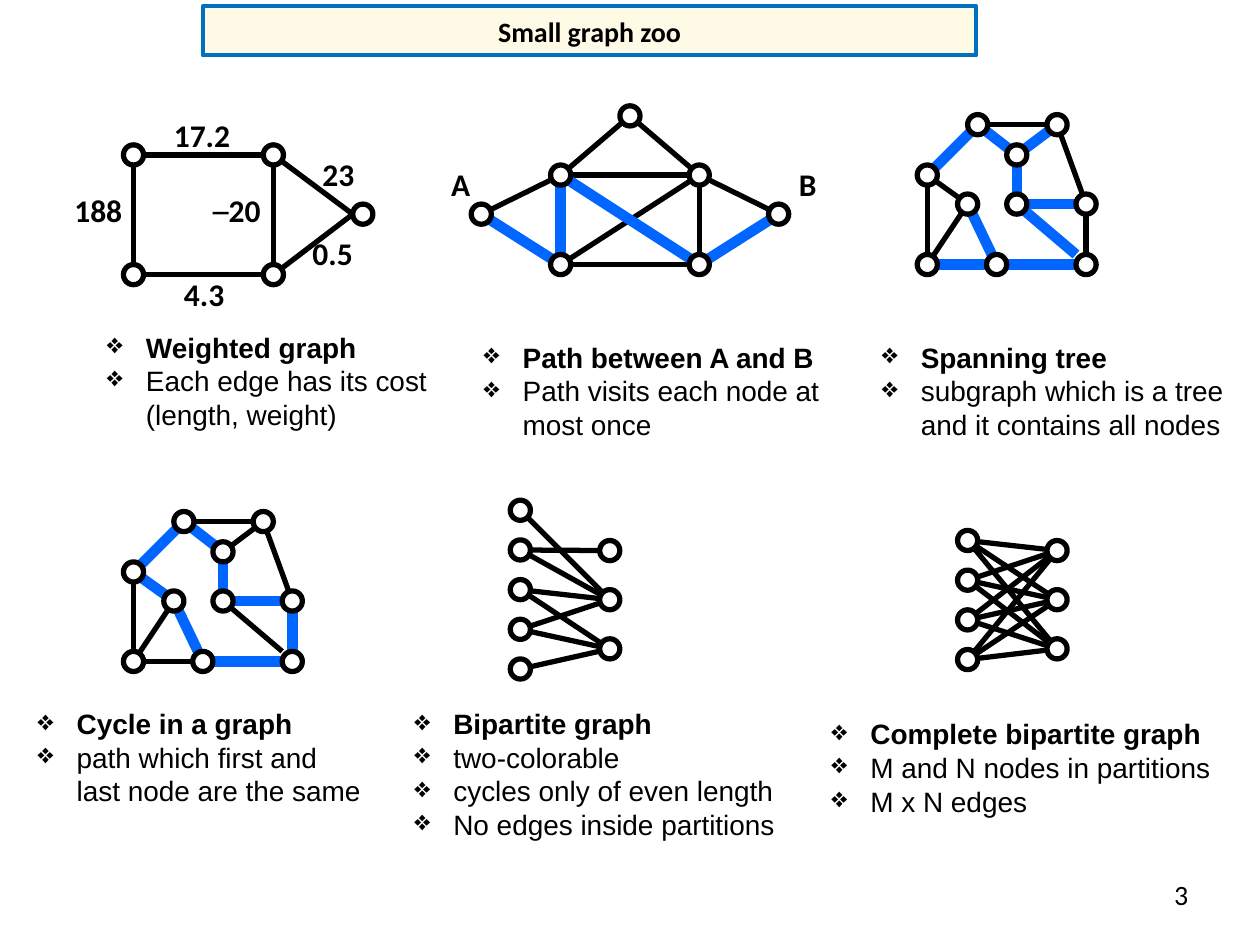
from itertools import product

from lxml import etree
from pptx import Presentation
from pptx.dml.color import RGBColor
from pptx.enum.shapes import MSO_CONNECTOR, MSO_SHAPE
from pptx.enum.text import MSO_ANCHOR, MSO_AUTO_SIZE, PP_ALIGN
from pptx.oxml.ns import qn
from pptx.util import Inches, Pt

BLACK = RGBColor(0x00, 0x00, 0x00)
WHITE = RGBColor(0xFF, 0xFF, 0xFF)
BLUE = RGBColor(0x00, 0x66, 0xFF)
CREAM = RGBColor(0xFF, 0xFA, 0xE5)
FRAME = RGBColor(0x00, 0x70, 0xC0)
STRAIGHT = MSO_CONNECTOR.STRAIGHT
OVAL, RECTANGLE = MSO_SHAPE.OVAL, MSO_SHAPE.RECTANGLE
MIDDLE = MSO_ANCHOR.MIDDLE
GROW = MSO_AUTO_SIZE.SHAPE_TO_FIT_TEXT
CENTER, RIGHT = PP_ALIGN.CENTER, PP_ALIGN.RIGHT

WEIGHTED = {"A": (1.06, 1.23), "B": (2.17, 1.23), "C": (2.17, 2.18),
            "D": (1.06, 2.18), "E": (2.88, 1.7)}
WEIGHTED_TIP = {"e": (2.8, 1.7)}
PATH = {"A": (3.82, 1.7), "B": (6.18, 1.7), "C": (5, 0.92), "D": (4.45, 1.39),
        "E": (5.55, 1.39), "F": (4.45, 2.1), "G": (5.55, 2.1)}
TREE = {"A": (7.76, 0.99), "B": (8.39, 0.99), "C": (8.07, 1.23),
        "D": (7.36, 1.39), "E": (7.68, 1.62), "F": (8.07, 1.62),
        "G": (8.62, 1.62), "H": (7.36, 2.1), "I": (7.91, 2.1),
        "J": (8.62, 2.1)}
TREE_TIP = {"j": (8.54, 2.02)}
CYCLE_SHIFT = (-6.3, 3.15)

WEIGHTS = [("17.2", 1.38, 0.92, 0.45), ("23", 2.56, 1.23, 0.26),
           ("188", 0.59, 1.52, 0.39), ("─20", 1.69, 1.52, 0.39),
           ("0.5", 2.48, 1.86, 0.39), ("4.3", 1.46, 2.18, 0.39)]
PATH_ENDS = [("A", 3.58, 1.31, 0.15), ("B", 6.34, 1.31, 0.14)]

CAPTIONS = [
    (0.75, 2.57, 2.99, 0.91,
     ["Weighted graph", "Each edge has its cost (length, weight)"]),
    (3.74, 2.65, 3.15, 0.91,
     ["Path between A and B", "Path visits each node at most once"]),
    (6.9, 2.65, 2.98, 0.91,
     ["Spanning tree", "subgraph which is a tree and it contains all nodes"]),
    (0.2, 5.56, 2.82, 0.91,
     ["Cycle in a graph", "path which first and last node are the same"]),
    (3.19, 5.56, 3.07, 1.18,
     ["Bipartite graph", "two-colorable", "cycles only of even length",
      "No edges inside partitions"]),
    (6.5, 5.64, 3.31, 0.91,
     ["Complete bipartite graph", "M and N nodes in partitions",
      "M x N edges"]),
]


def shift(points, offset):
    return {name: (x + offset[0], y + offset[1])
            for name, (x, y) in points.items()}


def column(names, x, top, gap):
    return {name: (x, top + gap * row) for row, name in enumerate(names)}


class GraphSlide:
    heading_font = "Calibri"
    body_font = "Arial"
    body_size = 16
    label_size = 18
    node_size = 0.16
    edge_width = 3
    marked_width = 6

    def __init__(self, slide):
        self.shapes = slide.shapes

    def style(self, font, name, size, bold=False):
        font.name = name
        font.size = Pt(size)
        font.bold = bold
        font.color.rgb = BLACK

    def shape(self, kind, left, top, width, height, fill, line, line_width):
        shape = self.shapes.add_shape(kind, Inches(left), Inches(top),
                                      Inches(width), Inches(height))
        shape.shadow.inherit = False
        shape.fill.solid()
        shape.fill.fore_color.rgb = fill
        shape.line.color.rgb = line
        shape.line.width = Pt(line_width)
        return shape

    def box(self, left, top, width, height):
        return self.shapes.add_textbox(Inches(left), Inches(top),
                                       Inches(width), Inches(height))

    def edge(self, start, end, color, width):
        line = self.shapes.add_connector(STRAIGHT, *map(Inches, start + end))
        line.line.color.rgb = color
        line.line.width = Pt(width)
        properties = line._element.find(qn("p:spPr"))
        etree.SubElement(properties, qn("a:effectLst"))

    def node(self, x, y):
        size = self.node_size
        self.shape(OVAL, x - size / 2, y - size / 2, size, size,
                   WHITE, BLACK, self.edge_width)

    def graph(self, nodes, edges, marked=(), tips=None):
        points = {**nodes, **(tips or {})}
        for start, end in edges:
            self.edge(points[start], points[end], BLACK, self.edge_width)
        for start, end in marked:
            self.edge(points[start], points[end], BLUE, self.marked_width)
        for x, y in nodes.values():
            self.node(x, y)

    def label(self, text, left, top, width):
        frame = self.box(left, top, width, 0.3).text_frame
        frame.margin_left = frame.margin_right = 0
        frame.margin_top = frame.margin_bottom = 0
        frame.word_wrap = False
        frame.auto_size = GROW
        frame.text = text
        self.style(frame.paragraphs[0].runs[0].font, self.heading_font,
                   self.label_size, True)

    def caption(self, left, top, width, height, lines):
        frame = self.box(left, top, width, height).text_frame
        frame.word_wrap = True
        frame.auto_size = GROW
        frame.text = "\n".join(lines)
        for index, para in enumerate(frame.paragraphs):
            properties = para._p.get_or_add_pPr()
            properties.set("marL", str(Inches(0.31)))
            properties.set("indent", str(-Inches(0.31)))
            etree.SubElement(properties, qn("a:buChar"), char="❖")
            self.style(para.runs[0].font, self.body_font, self.body_size,
                       index == 0)

    def title(self, text):
        box = self.shape(RECTANGLE, 1.61, 0.05, 6.14, 0.39, CREAM, FRAME, 2.25)
        self.line_of_text(box.text_frame, text, CENTER, True)

    def page_number(self, text):
        frame = self.box(7.2, 6.9, 2.33, 0.4).text_frame
        self.line_of_text(frame, text, RIGHT, False)

    def line_of_text(self, frame, text, alignment, bold):
        frame.word_wrap = True
        frame.vertical_anchor = MIDDLE
        frame.text = text
        para = frame.paragraphs[0]
        para.alignment = alignment
        self.style(para.runs[0].font, self.heading_font, self.body_size, bold)


def main():
    deck = Presentation()
    deck.slide_width, deck.slide_height = Inches(10), Inches(7.5)
    page = GraphSlide(deck.slides.add_slide(deck.slide_layouts[6]))

    page.graph(WEIGHTED, "AD AB CB DC eC eB".split(), tips=WEIGHTED_TIP)
    page.graph(PATH, "EC GE CD FE ED GF DA EB".split(),
               "BG FA FD DG".split())
    page.graph(TREE, "EH GJ DH BA GB ED".split(),
               "GF JI Fj IE IH CA CF BC AD".split(), TREE_TIP)
    page.graph(shift(TREE, CYCLE_SHIFT), "EH Fj DH IH BC BA GB".split(),
               "GF GJ JI IE CA CF AD ED".split(),
               shift(TREE_TIP, CYCLE_SHIFT))

    left = column("ABCDE", 4.13, 4.05, 0.315)
    right = column("XYZ", 4.84, 4.37, 0.39)
    page.graph({**left, **right}, "YA XB YB YC ZC YD ZD ZE".split())

    left = column("ABCD", 7.68, 4.29, 0.315)
    right = column("XYZ", 8.39, 4.37, 0.39)
    page.graph({**left, **right}, product(left, right))

    for label in WEIGHTS + PATH_ENDS:
        page.label(*label)
    for caption in CAPTIONS:
        page.caption(*caption)
    page.title("Small graph zoo")
    page.page_number("3")
    deck.save("out.pptx")


if __name__ == "__main__":
    main()
